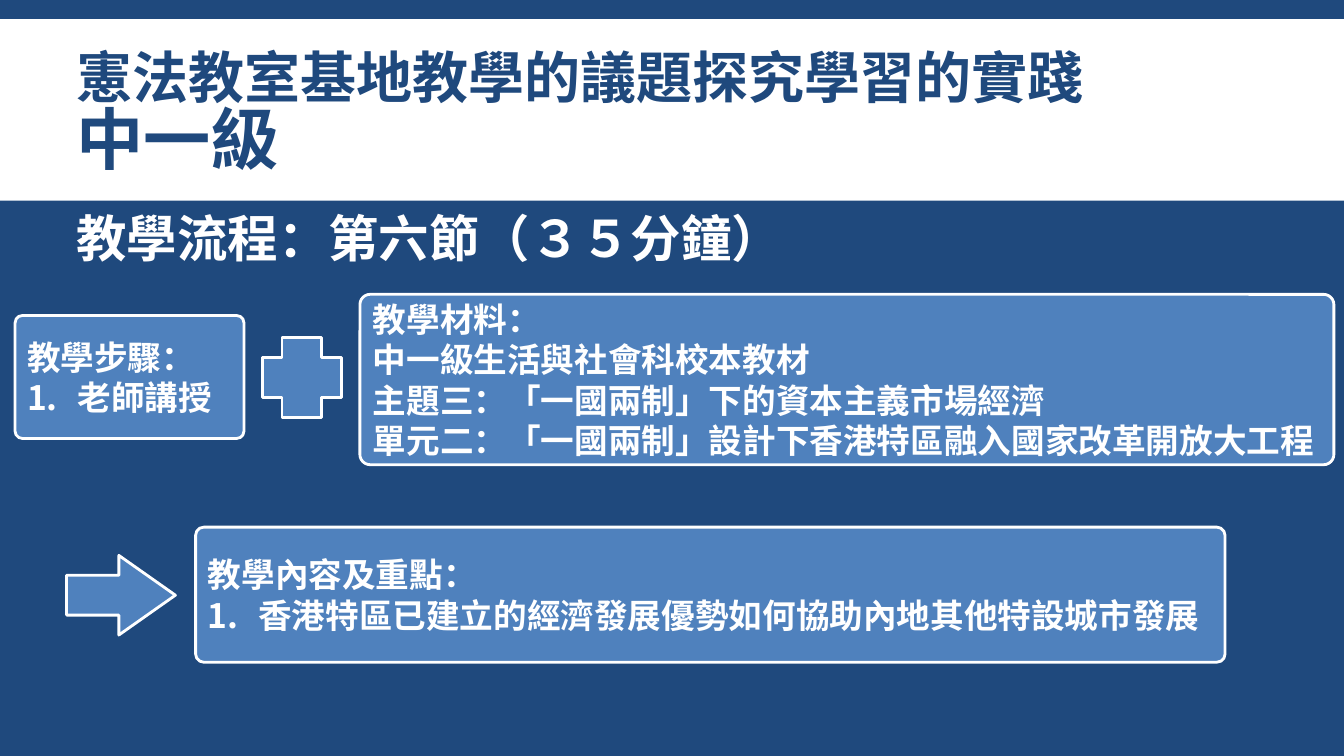
from pptx import Presentation
from pptx.dml.color import RGBColor
from pptx.enum.shapes import MSO_SHAPE
from pptx.enum.text import MSO_ANCHOR, MSO_AUTO_SIZE, PP_ALIGN
from pptx.oxml.ns import qn
from pptx.util import Inches, Pt
from lxml.etree import SubElement

NAVY, BLUE, WHITE = "1F497D", "4F81BD", "FFFFFF"
FONT = "Cabin"
LEFT = 0.66


def color(code):
    return RGBColor.from_string(code)


def style(para, size, code):
    para.font.name = FONT
    para.font.size = Pt(size)
    para.font.bold = True
    para.font.color.rgb = color(code)


def number(para):
    """Turn a paragraph into an automatically numbered item."""
    props = para._p.get_or_add_pPr()
    props.set("marL", str(Inches(0.5)))
    props.set("indent", str(Inches(-0.5)))
    SubElement(props, qn("a:buFont"), typeface="+mj-lt")
    SubElement(props, qn("a:buAutoNum"), type="arabicPeriod")


def add_form(slide, kind, box, fill=BLUE, line=WHITE):
    form = slide.shapes.add_shape(kind, *map(Inches, box))
    form.shadow.inherit = False
    form.fill.solid()
    form.fill.fore_color.rgb = color(fill)
    form.line.color.rgb = color(line)
    form.line.width = Pt(2)
    return form


def add_header(slide, box, lines):
    """Place the white band and the title, whose lines are (text, size)."""
    left, top, width, height = box
    band = add_form(slide, MSO_SHAPE.RECTANGLE, box)
    band.fill.fore_color.rgb = color(WHITE)
    band.line.fill.background()
    title = slide.shapes.title
    title.element.addprevious(band.element)
    title.left, title.top = Inches(left + LEFT), Inches(top + 0.13)
    title.width, title.height = Inches(11.77), Inches(height - 0.15)
    frame = title.text_frame
    frame.word_wrap = True
    frame.auto_size = MSO_AUTO_SIZE.NONE
    frame.vertical_anchor = MSO_ANCHOR.MIDDLE
    para = frame.paragraphs[0]
    para.alignment = PP_ALIGN.LEFT
    para.line_spacing = 0.85
    style(para, lines[0][1], NAVY)
    for i, (text, size) in enumerate(lines):
        if i:
            para.add_line_break()
        run = para.add_run()
        run.text = text
        run.font.size = Pt(size)


def add_lead(slide, box, text):
    frame = slide.shapes.add_textbox(*map(Inches, box)).text_frame
    frame.word_wrap = True
    para = frame.paragraphs[0]
    para.text = text
    para.alignment = PP_ALIGN.JUSTIFY
    para.line_spacing = 0.9
    para.space_before, para.space_after = Pt(12), Pt(2)
    style(para, 36, WHITE)


def add_card(slide, box, lines, items=()):
    """Place a rounded card with plain lines, then numbered items."""
    card = add_form(slide, MSO_SHAPE.ROUNDED_RECTANGLE, box)
    card.adjustments[0] = 0.06
    frame = card.text_frame
    frame.word_wrap = True
    frame.vertical_anchor = MSO_ANCHOR.MIDDLE
    frame.text = "\n".join([*lines, *items])
    for i, para in enumerate(frame.paragraphs):
        para.alignment = PP_ALIGN.LEFT
        style(para, 24, WHITE)
        if i >= len(lines):
            number(para)


def add_flow(slide, left, top):
    """Place steps plus materials, and the arrow to the content below."""
    add_card(slide, (left, top + 0.21, 2.27, 1.22),
             ["教學步驟："], ["老師講授"])
    add_form(slide, MSO_SHAPE.CROSS, (left + 2.45, top + 0.43, 0.79, 0.79))
    add_card(slide, (left + 3.42, top, 9.66, 1.69), [
        "教學材料：",
        "中一級生活與社會科校本教材",
        "主題三：「一國兩制」下的資本主義市場經濟",
        "單元二：「一國兩制」設計下香港特區融入國家改革開放大工程",
    ])
    arrow = add_form(slide, MSO_SHAPE.RIGHT_ARROW,
                     (left + 0.51, top + 2.59, 1.08, 0.79))
    arrow.adjustments[1] = 0.71
    add_card(slide, (left + 1.79, top + 2.31, 10.21, 1.34),
             ["教學內容及重點："],
             ["香港特區已建立的經濟發展優勢如何協助內地其他特設城市發展"])


def main():
    deck = Presentation()
    deck.slide_width, deck.slide_height = Inches(13.33), Inches(7.5)
    slide = deck.slides.add_slide(deck.slide_layouts[5])
    slide.background.fill.solid()
    slide.background.fill.fore_color.rgb = color(NAVY)
    add_header(slide, (0, 0.19, 13.33, 1.8),
               [("憲法教室基地教學的議題探究學習的實踐", 40), ("中一級", 48)])
    add_lead(slide, (LEFT, 2.07, 11.88, 0.8), "教學流程：第六節（３５分鐘）")
    add_flow(slide, 0.15, 2.92)
    deck.save("out.pptx")


if __name__ == "__main__":
    main()
